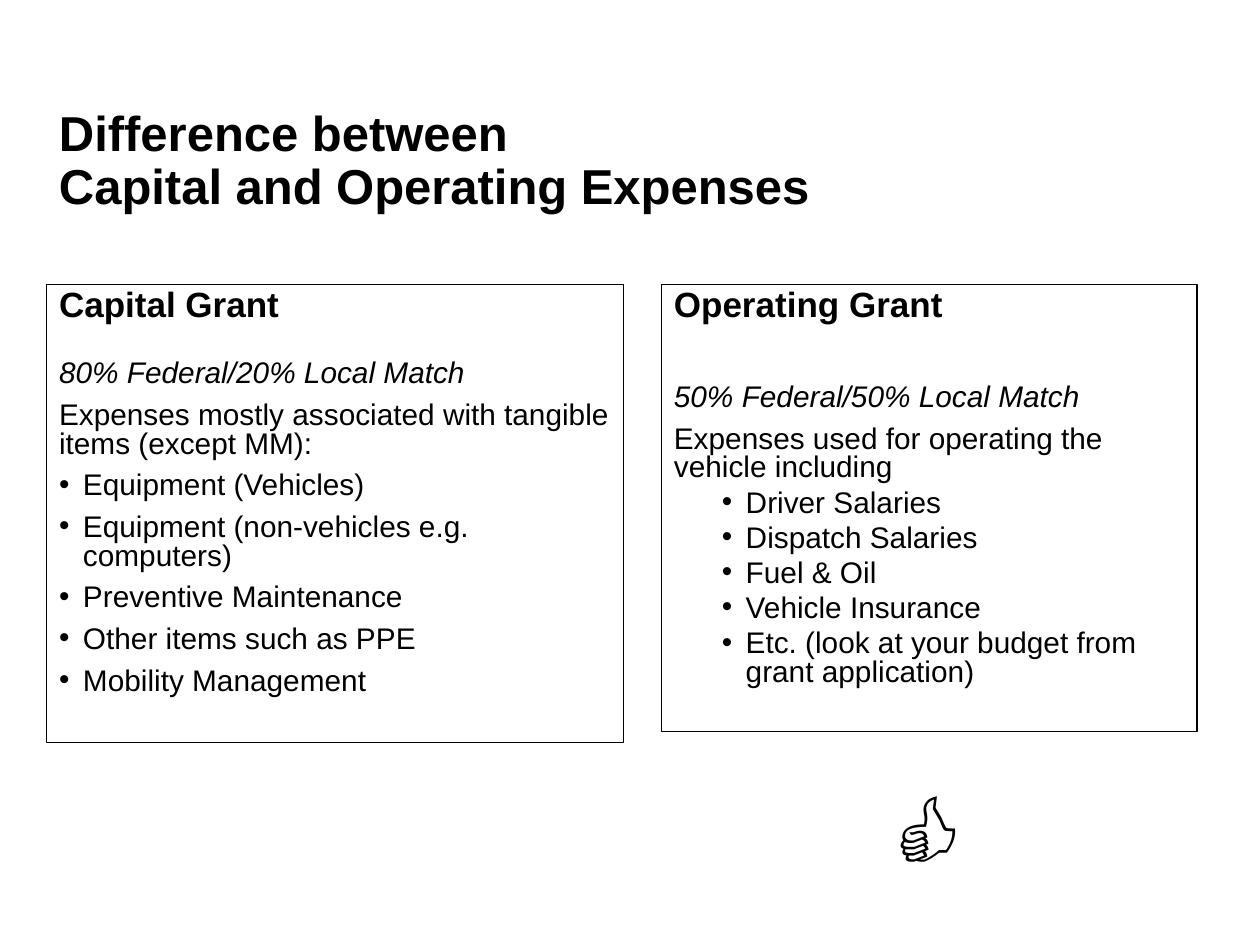
from lxml.etree import SubElement as Sub
from pptx import Presentation as Deck
from pptx.dml.color import RGBColor as Rgb
from pptx.enum.shapes import MSO_SHAPE as Kind
from pptx.enum.text import MSO_ANCHOR as Anchor, PP_ALIGN as Align
from pptx.oxml.ns import qn
from pptx.util import Inches as In, Pt

WIDE, HIGH = 10, 7.5
INK = {"text": "000000", "line": "000000"}
STEP = 0.19


def write(frame, text, size=17, font="Arial", bold=False, slant=False,
          lead=None, gap=0, inset=None):
    """Add one formatted paragraph, with a bullet when inset is given."""
    first = not frame.paragraphs[0].runs
    para = frame.paragraphs[0] if first else frame.add_paragraph()
    para.text = text
    para.alignment = Align.LEFT
    para.line_spacing = lead
    para.space_before = Pt(0 if first else gap)
    if inset is not None:
        props = para._p.get_or_add_pPr()
        props.set("marL", str(In(inset)))
        props.set("indent", str(-In(STEP)))
        Sub(props, qn("a:buFont"), typeface="Arial")
        Sub(props, qn("a:buChar"), char="•")
    face = para.font
    for run in para.runs:
        face = run.font
        face.name, face.size, face.bold, face.italic = font, Pt(size), bold, slant
        face.color.rgb = Rgb.from_string(INK["text"])


def place(box):
    """Turn a box given as shares of the slide into lengths."""
    return [In(part * side) for part, side in zip(box, (WIDE, HIGH) * 2)]


def label(slide, box, text, anchor=Anchor.TOP, **form):
    """Put a plain text box on the slide."""
    frame = slide.shapes.add_textbox(*place(box)).text_frame
    frame.word_wrap = True
    frame.vertical_anchor = anchor
    write(frame, text, **form)


def panel(slide, box, head, share, intro, items, drop, inset, gap):
    """Draw an outlined grant panel with its heading, match and list."""
    shape = slide.shapes.add_shape(Kind.RECTANGLE, *place(box))
    shape.shadow.inherit = False
    shape.fill.background()
    shape.line.color.rgb = Rgb.from_string(INK["line"])
    shape.line.width = Pt(0.75)
    frame = shape.text_frame
    frame.word_wrap = True
    frame.vertical_anchor = Anchor.TOP
    write(frame, head, size=20, bold=True, lead=0.8)
    write(frame, share, slant=True, lead=0.8, gap=drop)
    write(frame, intro, lead=0.8, gap=7.5)
    for item in items:
        write(frame, item, lead=0.8, gap=gap, inset=inset)


def build():
    """Build the slide and save it."""
    deck = Deck()
    deck.slide_width, deck.slide_height = In(WIDE), In(HIGH)
    slide = deck.slides.add_slide(deck.slide_layouts[6])
    left, top = 0.037, 0.301
    label(slide, (left, 0.075, 0.857, 0.193),
          "Difference between\vCapital and Operating Expenses",
          anchor=Anchor.MIDDLE, size=28, bold=True, lead=0.9)
    panel(slide, (left, top, 0.458, 0.485), "Capital Grant",
          "80% Federal/20% Local Match",
          "Expenses mostly associated with tangible items (except MM):",
          ["Equipment (Vehicles)", "Equipment (non-vehicles e.g. computers)",
           "Preventive Maintenance", "Other items such as PPE",
           "Mobility Management"],
          drop=21, inset=STEP, gap=7.5)
    panel(slide, (0.525, top, 0.425, 0.473), "Operating Grant",
          "50% Federal/50% Local Match",
          "Expenses used for operating the vehicle including",
          ["Driver Salaries", "Dispatch Salaries", "Fuel & Oil",
           "Vehicle Insurance",
           "Etc. (look at your budget from grant application)"],
          drop=34.5, inset=3 * STEP, gap=3.8)
    label(slide, (0.689, 0.808, 0.108, 0.148), "👍",
          size=60, font="Calibri", slant=True)
    deck.save("out.pptx")


if __name__ == "__main__":
    build()
